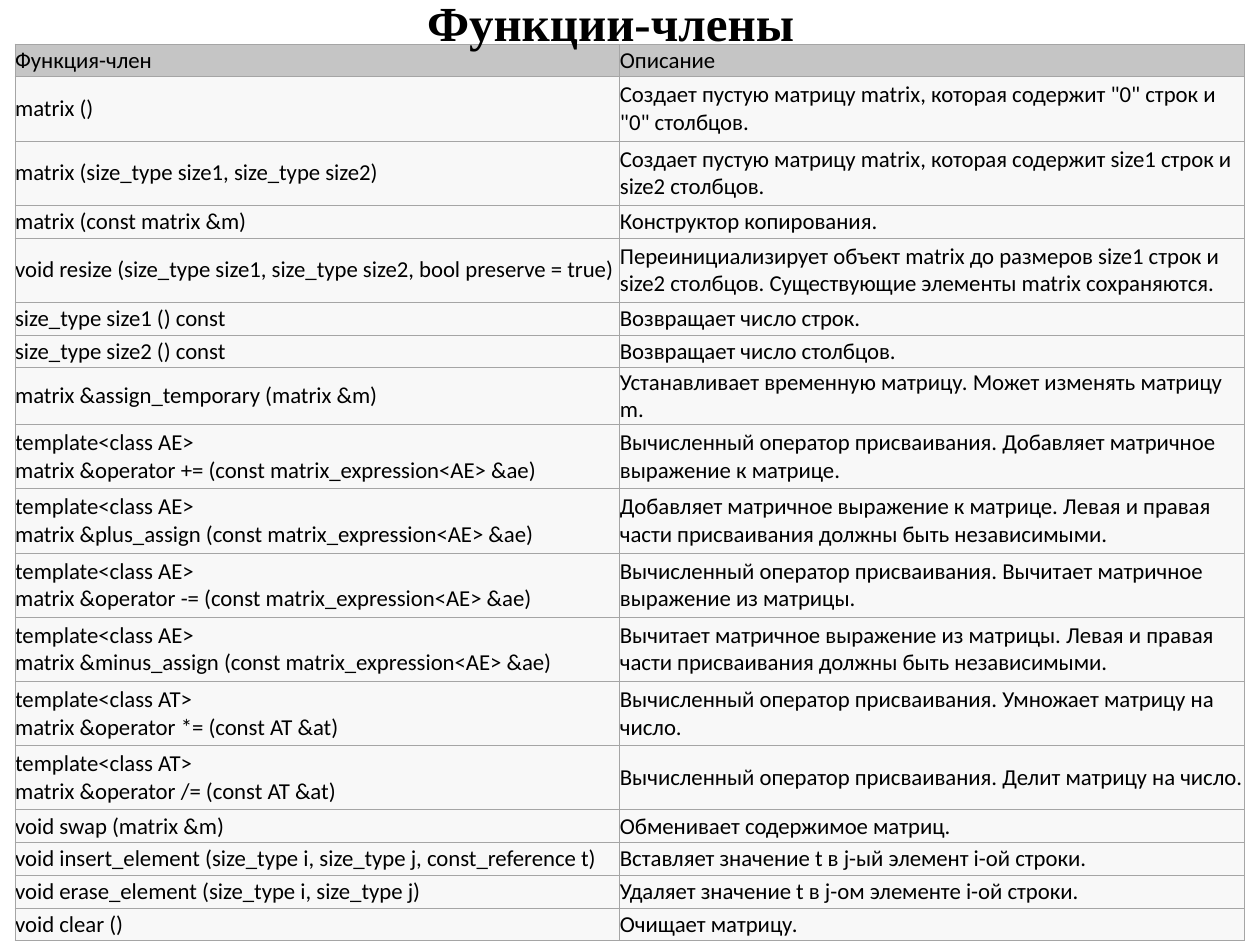
from lxml import etree
from pptx import Presentation
from pptx import util as u
from pptx.dml import color
from pptx.enum import text
from pptx.oxml import ns

TITLE = "Функции-члены"
SINGLE, TIGHT, DOUBLE = 0.26, 0.45, 0.51
HEADER = (SINGLE, "Функция-член", "Описание")
MEMBERS = [
    (DOUBLE, "matrix ()",
     "Создает пустую матрицу matrix, которая содержит \"0\" строк и \"0\" столбцов."),
    (DOUBLE, "matrix (size_type size1, size_type size2)",
     "Создает пустую матрицу matrix, которая содержит size1 строк и size2 столбцов."),
    (SINGLE, "matrix (const matrix &m)", "Конструктор копирования."),
    (DOUBLE, "void resize (size_type size1, size_type size2, bool preserve = true)",
     "Переинициализирует объект matrix до размеров size1 строк и size2 столбцов. "
     "Существующие элементы matrix сохраняются."),
    (SINGLE, "size_type size1 () const", "Возвращает число строк."),
    (SINGLE, "size_type size2 () const", "Возвращает число столбцов."),
    (TIGHT, "matrix &assign_temporary (matrix &m)",
     "Устанавливает временную матрицу. Может изменять матрицу m."),
    (DOUBLE, "template<class AE>\nmatrix &operator += (const matrix_expression<AE> &ae)",
     "Вычисленный оператор присваивания. Добавляет матричное выражение к матрице."),
    (DOUBLE, "template<class AE>\nmatrix &plus_assign (const matrix_expression<AE> &ae)",
     "Добавляет матричное выражение к матрице. "
     "Левая и правая части присваивания должны быть независимыми."),
    (DOUBLE, "template<class AE>\nmatrix &operator -= (const matrix_expression<AE> &ae)",
     "Вычисленный оператор присваивания. Вычитает матричное выражение из матрицы."),
    (DOUBLE, "template<class AE>\nmatrix &minus_assign (const matrix_expression<AE> &ae)",
     "Вычитает матричное выражение из матрицы. "
     "Левая и правая части присваивания должны быть независимыми."),
    (DOUBLE, "template<class AT>\nmatrix &operator *= (const AT &at)",
     "Вычисленный оператор присваивания. Умножает матрицу на число."),
    (DOUBLE, "template<class AT>\nmatrix &operator /= (const AT &at)",
     "Вычисленный оператор присваивания. Делит матрицу на число."),
    (SINGLE, "void swap (matrix &m)", "Обменивает содержимое матриц."),
    (SINGLE, "void insert_element (size_type i, size_type j, const_reference t)",
     "Вставляет значение t в j-ый элемент i-ой строки."),
    (SINGLE, "void erase_element (size_type i, size_type j)",
     "Удаляет значение t в j-ом элементе i-ой строки."),
    (SINGLE, "void clear ()", "Очищает матрицу."),
]
COLUMNS = (4.8, 4.96)
HEADER_FILL, MEMBER_FILL, BORDER, INK = "C5C5C5", "F8F8F8", "A5A5A5", "000000"
TITLE_FONT = dict(name="Times New Roman", size=u.Pt(28), bold=True)
CELL_FONT = dict(name="Calibri", size=u.Pt(13), bold=False)
CELL_FORMAT = dict(margin_left=0, margin_right=0, margin_top=0, margin_bottom=0,
                   vertical_anchor=text.MSO_ANCHOR.MIDDLE)
TITLE_FORMAT = dict(margin_left=u.Inches(0.1), margin_right=u.Inches(0.1),
                    margin_top=u.Inches(0.05), margin_bottom=u.Inches(-0.1),
                    vertical_anchor=text.MSO_ANCHOR.MIDDLE, word_wrap=False,
                    auto_size=text.MSO_AUTO_SIZE.SHAPE_TO_FIT_TEXT)


def rgb(value):
    return color.RGBColor.from_string(value)


def apply(target, values):
    for key, value in values.items():
        setattr(target, key, value)


def write(paragraph, words, font):
    paragraph.text = words
    for run in paragraph.runs:
        apply(run.font, font)
        run.font.color.rgb = rgb(INK)


def add_borders(cell):
    properties = cell._tc.get_or_add_tcPr()
    for index, side in enumerate(("lnL", "lnR", "lnT", "lnB")):
        line = etree.Element(ns.qn("a:" + side), w=str(u.Pt(0.6)))
        fill = etree.SubElement(line, ns.qn("a:solidFill"))
        etree.SubElement(fill, ns.qn("a:srgbClr"), val=BORDER)
        properties.insert(index, line)


def add_member_table(slide):
    rows = [HEADER] + MEMBERS
    height = sum(row[0] for row in rows)
    table = slide.shapes.add_table(len(rows), len(COLUMNS), u.Inches(0.12), u.Inches(0.35),
                                   u.Inches(sum(COLUMNS)), u.Inches(height)).table
    for column, width in zip(table.columns, COLUMNS):
        column.width = u.Inches(width)
    for index, (row_height, *entries) in enumerate(rows):
        table.rows[index].height = u.Inches(row_height)
        for cell, entry in zip(table.rows[index].cells, entries):
            apply(cell, CELL_FORMAT)
            cell.fill.solid()
            cell.fill.fore_color.rgb = rgb(MEMBER_FILL if index else HEADER_FILL)
            add_borders(cell)
            write(cell.text_frame.paragraphs[0], entry, CELL_FONT)


def add_title(slide):
    title = slide.shapes.add_textbox(u.Inches(3.27), u.Inches(-0.11),
                                     u.Inches(3.15), u.Inches(0.42))
    apply(title.text_frame, TITLE_FORMAT)
    heading = title.text_frame.paragraphs[0]
    heading.alignment = text.PP_ALIGN.CENTER
    write(heading, TITLE, TITLE_FONT)


def main():
    deck = Presentation()
    deck.slide_width, deck.slide_height = u.Inches(10), u.Inches(7.5)
    slide = deck.slides.add_slide(deck.slide_layouts[6])
    add_member_table(slide)
    add_title(slide)
    deck.save("out.pptx")


if __name__ == "__main__":
    main()
